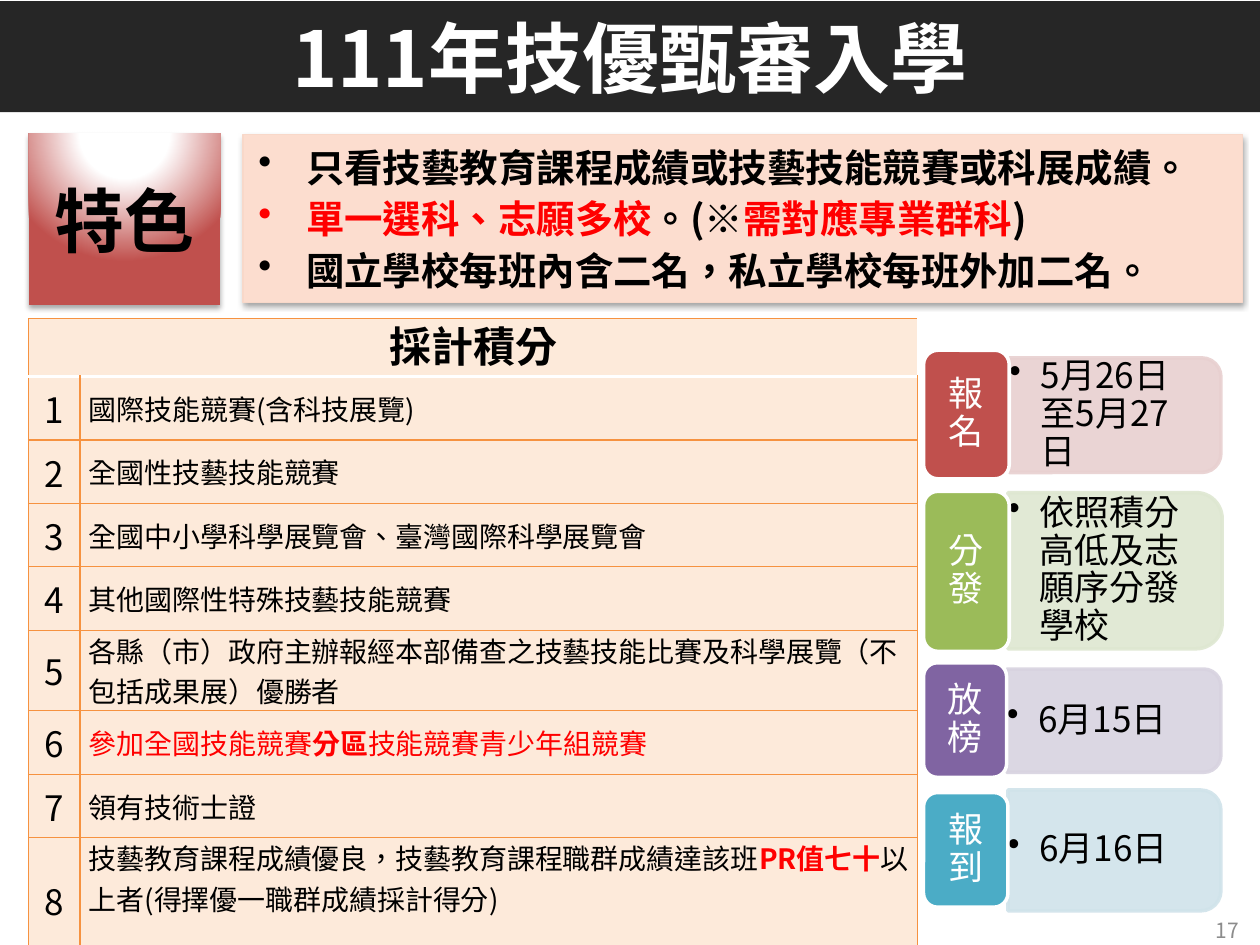
from dataclasses import dataclass

from lxml.etree import SubElement
from pptx import Presentation
from pptx.dml.color import RGBColor
from pptx.enum.shapes import MSO_SHAPE
from pptx.enum.text import MSO_ANCHOR, PP_ALIGN
from pptx.oxml import parse_xml
from pptx.oxml.ns import nsdecls, qn
from pptx.util import Inches, Pt

# The slide is a grid of 100 columns by 75 rows
COLUMNS, ROWS = 100, 75
SLIDE_WIDTH, SLIDE_HEIGHT = Inches(10), Inches(7.5)
UNIT = SLIDE_WIDTH // COLUMNS
FONT = "Noto Sans CJK SC"
BLACK, WHITE, RED = "000000", "FFFFFF", "FF0000"
CELL_FILL, CELL_BORDER = "FDEADA", "F69240"


@dataclass(frozen=True)
class Box:
    """A place on the grid, in columns and rows."""
    left: float
    top: float
    width: float
    height: float

    def emu(self) -> list[int]:
        return [round(n * UNIT) for n in (self.left, self.top, self.width, self.height)]


@dataclass(frozen=True)
class Run:
    text: str
    color: str | None = None
    bold: bool | None = None
    font: str | None = None


@dataclass(frozen=True)
class Style:
    size: float
    color: str = BLACK
    bold: bool = False
    align: PP_ALIGN = PP_ALIGN.LEFT
    line_spacing: float | None = None
    space_after: float = 0
    bullet_indent: float = 0


@dataclass(frozen=True)
class Step:
    label: str
    detail: str
    color: str
    tint: str
    label_box: Box
    detail_box: Box


def rgb(color: str) -> RGBColor:
    return RGBColor.from_string(color)


def set_font(font, name: str) -> None:
    font.name = name
    font._rPr.find(qn("a:latin")).addnext(parse_xml(f'<a:ea {nsdecls("a")} typeface="{name}"/>'))


def write(frame, paragraphs: list[list[Run]], style: Style) -> None:
    for index, runs in enumerate(paragraphs):
        paragraph = frame.paragraphs[0] if index == 0 else frame.add_paragraph()
        paragraph.alignment = style.align
        if style.bullet_indent:
            properties = paragraph._p.get_or_add_pPr()
            indent = round(style.bullet_indent * UNIT)
            properties.set("marL", str(indent))
            properties.set("indent", str(-indent))
            SubElement(properties, qn("a:buChar"), char="•")
        if style.line_spacing:
            paragraph.line_spacing = style.line_spacing
        paragraph.space_after = Pt(style.space_after)
        paragraph.font.size = Pt(style.size)
        paragraph.font.bold = style.bold
        paragraph.font.color.rgb = rgb(style.color)
        set_font(paragraph.font, FONT)
        for part in runs:
            run = paragraph.add_run()
            run.text = part.text
            # Traditional Chinese centres its punctuation
            run._r.get_or_add_rPr().set("lang", "zh-TW")
            if part.color:
                run.font.color.rgb = rgb(part.color)
            if part.bold is not None:
                run.font.bold = part.bold
            if part.font:
                set_font(run.font, part.font)


def prepare_frame(shape, insets: tuple[float, float, float, float]):
    frame = shape.text_frame
    frame.word_wrap = True
    frame.vertical_anchor = MSO_ANCHOR.MIDDLE
    frame.margin_left, frame.margin_top, frame.margin_right, frame.margin_bottom = (
        round(inset * UNIT) for inset in insets)
    return frame


def add_text(slide, box: Box, text: str, style: Style, insets=(1, 0.5, 1, 0.5)) -> None:
    shape = slide.shapes.add_textbox(*box.emu())
    write(prepare_frame(shape, insets), [[Run(text)]], style)


def add_block(slide, kind, box: Box, fill: str, line: str | None = None,
              line_width: float = 2, opacity: int = 100):
    shape = slide.shapes.add_shape(kind, *box.emu())
    shape.shadow.inherit = False
    shape.fill.solid()
    shape.fill.fore_color.rgb = rgb(fill)
    if line:
        shape.line.color.rgb = rgb(line)
        shape.line.width = Pt(line_width)
    else:
        shape.line.fill.background()
    if opacity < 100:
        for color in shape._element.spPr.iter(qn("a:srgbClr")):
            SubElement(color, qn("a:alpha"), val=str(opacity * 1000))
    return shape


def add_shadow(shape) -> None:
    effects = shape._element.spPr.find(qn("a:effectLst"))
    effects.append(parse_xml(
        f'<a:outerShdw {nsdecls("a")} blurRad="{Pt(3.1)}" dist="{Pt(1.8)}" dir="5400000" '
        'rotWithShape="0"><a:srgbClr val="000000"><a:alpha val="35000"/></a:srgbClr></a:outerShdw>'))


def add_glow_fill(shape, inner: str, outer: str) -> None:
    stops = "".join(f'<a:gs pos="{position}000"><a:srgbClr val="{color}"/></a:gs>'
                    for position, color in ((0, inner), (35, inner), (100, outer)))
    solid = shape._element.spPr.find(qn("a:solidFill"))
    solid.getparent().replace(solid, parse_xml(
        f'<a:gradFill {nsdecls("a")} rotWithShape="1"><a:gsLst>{stops}</a:gsLst><a:path path="circle">'
        '<a:fillToRect l="50000" t="-80000" r="50000" b="180000"/></a:path></a:gradFill>'))


def set_borders(cell, **changes: tuple[str, float]) -> None:
    properties = cell._tc.get_or_add_tcPr()
    for index, side in enumerate("LRTB"):
        color, width = changes.get(side, (CELL_BORDER, 0.75))
        properties.insert(index, parse_xml(
            f'<a:ln{side} {nsdecls("a")} w="{Pt(width)}"><a:solidFill><a:srgbClr val="{color}"/>'
            f'</a:solidFill></a:ln{side}>'))


def fill_cell(cell, runs: list[Run], style: Style, anchor=MSO_ANCHOR.MIDDLE, **borders) -> None:
    cell.fill.solid()
    cell.fill.fore_color.rgb = rgb(CELL_FILL)
    cell.margin_left = cell.margin_right = round(0.7 * UNIT)
    cell.margin_top = cell.margin_bottom = 0
    cell.vertical_anchor = anchor
    write(cell.text_frame, [runs], style)
    set_borders(cell, **borders)


def add_score_table(slide, box: Box, heading: str, items: list[list[Run]], heights: list[float]) -> None:
    table = slide.shapes.add_table(len(items) + 1, 2, *box.emu()).table
    table.first_row = table.horz_banding = False
    for column, width in zip(table.columns, (4.1, box.width - 4.1)):
        column.width = round(width * UNIT)
    for row, height in zip(table.rows, heights):
        row.height = round(height * UNIT)
    table.cell(0, 0).merge(table.cell(0, 1))
    heading_borders = {"R": (WHITE, 1), "B": (WHITE, 2)}
    centre = PP_ALIGN.CENTER
    fill_cell(table.cell(0, 0), [Run(heading)], Style(24, bold=True, align=centre, line_spacing=0.8),
              **heading_borders)
    set_borders(table.cell(0, 1), **heading_borders)
    for number, runs in enumerate(items, start=1):
        top_border = {"T": heading_borders["B"]} if number == 1 else {}
        anchor = MSO_ANCHOR.TOP if number == len(items) else MSO_ANCHOR.MIDDLE
        fill_cell(table.cell(number, 0), [Run(str(number))], Style(20, align=centre), **top_border)
        fill_cell(table.cell(number, 1), runs, Style(16), anchor, **top_border)


def add_step(slide, step: Step) -> None:
    # The panel is turned a quarter so that its round corners face right
    box = step.detail_box
    upright = Box(box.left + (box.width - box.height) / 2, box.top + (box.height - box.width) / 2,
                  box.height, box.width)
    panel = add_block(slide, MSO_SHAPE.ROUND_2_SAME_RECTANGLE, upright, step.tint, step.tint, opacity=90)
    panel.rotation = 90
    add_text(slide, Box(box.left, box.top, box.width - 0.5, box.height), step.detail,
             Style(20, line_spacing=0.9, bullet_indent=2.5), (0, 0, 1, 0))
    label = add_block(slide, MSO_SHAPE.ROUNDED_RECTANGLE, step.label_box, step.color, WHITE)
    write(prepare_frame(label, (1.1, 0.7, 1.1, 0.7)), [[Run(step.label)]],
          Style(20, WHITE, align=PP_ALIGN.CENTER, line_spacing=0.9))


SCORE_ITEMS = [
    [Run("國際技能競賽(含科技展覽)")],
    [Run("全國性技藝技能競賽")],
    [Run("全國中小學科學展覽會、臺灣國際科學展覽會")],
    [Run("其他國際性特殊技藝技能競賽")],
    [Run("各縣（市）政府主辦報經本部備查之技藝技能比賽及科學展覽（不包括成果展）優勝者")],
    [Run("參加全國技能競賽", RED), Run("分區", RED, True), Run("技能競賽青少年組競賽", RED)],
    [Run("領有技術士證")],
    [Run("技藝教育課程成績優良，技藝教育課程職群成績達該班"), Run("PR值七十", RED, True),
     Run("以上者(得擇優一職群成績採計得分)")],
]
ROW_HEIGHTS = [4.6, 5.03, 5.03, 5.03, 5.03, 6.4, 5.03, 5.03, 10]
FEATURES = [
    [Run("只看技藝", font="Noto Sans CJK JP"), Run("教育課程成績或技藝技能競賽或科展成績。")],
    [Run("單一選科、志願多校", RED), Run("。(※"), Run("需對應專業群科", RED), Run(")")],
    [Run("國立學校每班內含二名，私立學校每班外加二名。")],
]
STEPS = [
    Step("報名", "5月26日至5月27日", "C0504D", "E8D0D0", Box(73.3, 27.8, 6.8, 10.2), Box(80.1, 28.4, 16.8, 9.1)),
    Step("分發", "依照積分高低及志願序分發學校", "9BBB59", "DEE7D1",
         Box(73.3, 39, 6.8, 12.7), Box(80, 39.1, 17, 12.4)),
    Step("放榜", "6月15日", "8064A2", "D8D3E0", Box(73.3, 52.6, 6.6, 9.1), Box(79.9, 53.1, 17, 8.2)),
    Step("報到", "6月16日", "4BACC6", "D0E3EA", Box(73.3, 62.9, 6.7, 9.1), Box(80, 62.7, 16.9, 9.6)),
]


def main() -> None:
    presentation = Presentation()
    presentation.slide_width, presentation.slide_height = SLIDE_WIDTH, SLIDE_HEIGHT
    slide = presentation.slides.add_slide(presentation.slide_layouts[6])
    centre = PP_ALIGN.CENTER
    # Score table
    add_score_table(slide, Box(2.25, 25.3, 70.6, sum(ROW_HEIGHTS)), "採計積分", SCORE_ITEMS, ROW_HEIGHTS)
    # Feature heading and its three points
    heading = add_block(slide, MSO_SHAPE.RECTANGLE, Box(2.3, 10.6, 15.2, 13.6), "C0504D")
    add_glow_fill(heading, WHITE, "C0504D")
    add_shadow(heading)
    write(prepare_frame(heading, (1.9, 1.1, 1.9, 1.1)), [[Run("特色")]], Style(40, bold=True, align=centre))
    points = add_block(slide, MSO_SHAPE.RECTANGLE, Box(19.3, 10.7, 79.3, 13.3), "FCDDCF", "F8D8C9", 0.75)
    add_shadow(points)
    write(prepare_frame(points, (1.2, 1, 1.9, 1)), FEATURES,
          Style(22, bold=True, space_after=3.3, bullet_indent=3.8))
    # Title band
    title = add_block(slide, MSO_SHAPE.RECTANGLE, Box(0, 0.1, COLUMNS, 8.8), "262626")
    write(prepare_frame(title, (1, 0.5, 1, 0.5)), [[Run("111年技優甄審入學")]],
          Style(44, WHITE, bold=True, align=centre))
    # Schedule and page number
    for step in STEPS:
        add_step(slide, step)
    add_text(slide, Box(76, 71.8, 23.3, 4), "17", Style(12, "8C8C8C", align=PP_ALIGN.RIGHT))
    presentation.save("out.pptx")


if __name__ == "__main__":
    main()
